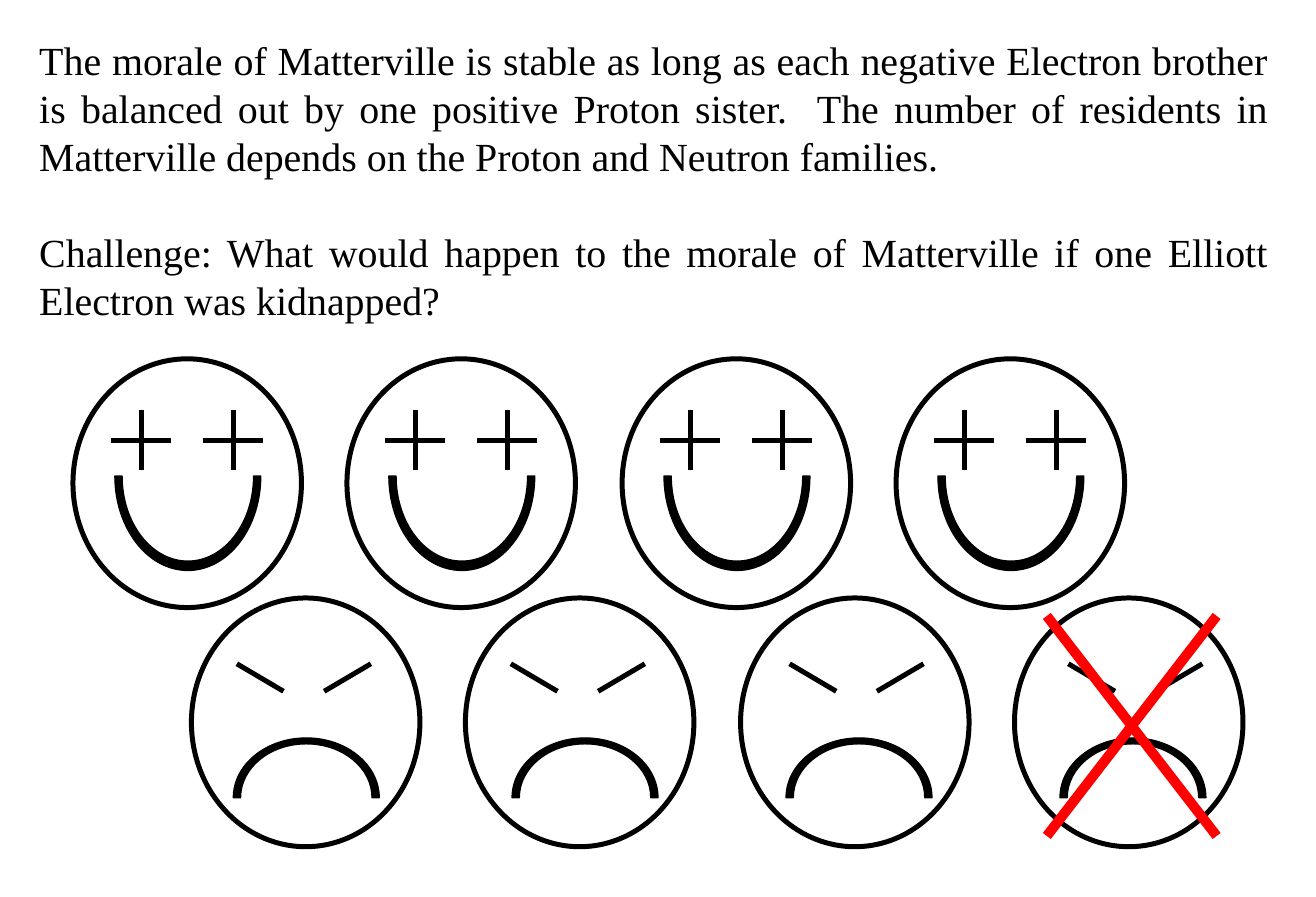
from pptx import Presentation
from pptx.dml.color import RGBColor
from pptx.enum.shapes import MSO_CONNECTOR as Connector, MSO_SHAPE as Shape
from pptx.enum.text import MSO_ANCHOR as Anchor, MSO_AUTO_SIZE as AutoSize, PP_ALIGN as Align
from pptx.oxml import parse_xml
from pptx.oxml.ns import nsdecls, qn
from pptx.util import Pt

PX = 9144  # 100 px to the inch
COLORS = {"ink": "000000", "face": "FFFFFF", "cross": "FF0000"}
FACE_WIDTH, FACE_HEIGHT = 191, 208
ROW_SPAN = 688  # from the first face of a row to the fourth
MOUTH_WIDTH = 122
LINE_HEIGHT = Pt(28.9)

# Upper half of a ring in a 1000 by 1000 box
MOUTH_CURVES = [
    ("moveTo", [(0, 500)]),
    ("cubicBezTo", [(0, 224), (224, 0), (500, 0)]),
    ("cubicBezTo", [(776, 0), (1000, 224), (1000, 500)]),
    ("lnTo", [(950, 500)]),
    ("cubicBezTo", [(950, 251), (749, 50), (500, 50)]),
    ("cubicBezTo", [(251, 50), (50, 251), (50, 500)]),
    ("close", []),
]

STORY = [
    "The morale of Matterville is stable as long as each negative Electron brother "
    "is balanced out by one positive Proton sister.  The number of residents in "
    "Matterville depends on the Proton and Neutron families.",
    "Challenge: What would happen to the morale of Matterville if one Elliott "
    "Electron was kidnapped?",
]


def px(*lengths):
    return [length * PX for length in lengths]


def color(name):
    return RGBColor.from_string(COLORS[name])


def paint(shape, fill, line_width):
    shape.shadow.inherit = False
    shape.fill.solid()
    shape.fill.fore_color.rgb = color(fill)
    shape.line.color.rgb = color("ink")
    shape.line.width = Pt(line_width)


def add_line(shapes, start, end, name="ink", width=3):
    line = shapes.add_connector(Connector.STRAIGHT, *px(*start, *end))
    line.line.color.rgb = color(name)
    line.line.width = Pt(width)
    properties = line._element.spPr
    properties.append(properties.makeelement(qn("a:effectLst"), {}))


def add_head(shapes, left, top):
    head = shapes.add_shape(Shape.OVAL, *px(left, top, FACE_WIDTH, FACE_HEIGHT))
    paint(head, "face", 3)


def mouth_geometry():
    steps = ""
    for command, points in MOUTH_CURVES:
        inner = "".join(f'<a:pt x="{x}" y="{y}"/>' for x, y in points)
        steps += f"<a:{command}>{inner}</a:{command}>"
    return parse_xml(
        f'<a:custGeom {nsdecls("a")}><a:avLst/><a:gdLst/><a:ahLst/><a:cxnLst/>'
        '<a:rect l="0" t="0" r="r" b="b"/>'
        f'<a:pathLst><a:path w="1000" h="1000">{steps}</a:path></a:pathLst></a:custGeom>'
    )


def add_mouth(shapes, left, top, height, sad=False):
    mouth = shapes.add_shape(Shape.RECTANGLE, *px(left, top, MOUTH_WIDTH, height))
    properties = mouth._element.spPr
    properties.replace(properties.find(qn("a:prstGeom")), mouth_geometry())
    mouth.rotation = 180
    if sad:
        properties.find(qn("a:xfrm")).set("flipV", "1")
    paint(mouth, "ink", 0.75)


def add_story(slide, left, top, width, height):
    box = slide.shapes.add_textbox(*px(left, top, width, height))
    frame = box.text_frame
    frame.word_wrap = True
    frame.auto_size = AutoSize.SHAPE_TO_FIT_TEXT
    frame.vertical_anchor = Anchor.MIDDLE
    frame.text = "\n".join(STORY)
    for paragraph in frame.paragraphs:
        paragraph.alignment = Align.JUSTIFY
        paragraph.line_spacing = LINE_HEIGHT
        font = paragraph.runs[0].font
        font.name = "Times New Roman"
        font.size = Pt(24)
        font.color.rgb = color("ink")
    frame.paragraphs[1].space_before = LINE_HEIGHT


def add_proton(slide, left, top):
    shapes = slide.shapes.add_group_shape().shapes
    add_head(shapes, left, top)
    add_mouth(shapes, left + 35, top + 19, 158)
    # Plus-shaped eyes
    for eye in (57, 134):
        x, y = left + eye, top + 68
        add_line(shapes, (x, y - 25), (x, y + 25))
        add_line(shapes, (x - 25, y), (x + 25, y))


def add_electron(slide, left, top, brow, mouth):
    shapes = slide.shapes.add_group_shape().shapes
    add_head(shapes, left, top)
    # Slanted brows
    for outer, slant in ((brow, 39), (brow + 112, -39)):
        x = left + outer
        add_line(shapes, (x, top + 55), (x + slant, top + 78))
    add_mouth(shapes, left + mouth, top + 117, 100, sad=True)


def add_cross(slide, left, top, width, height):
    shapes = slide.shapes.add_group_shape().shapes
    right, bottom = left + width, top + height
    add_line(shapes, (right, top), (left, bottom), "cross", 6)
    add_line(shapes, (left, top), (right, bottom), "cross", 6)


def main():
    presentation = Presentation()
    presentation.slide_width, presentation.slide_height = px(1100, 750)
    slide = presentation.slides.add_slide(presentation.slide_layouts[6])

    add_story(slide, 23, 25, 1047, 250)

    # Proton sisters above, Electron brothers below
    offsets = [round(ROW_SPAN * column / 3) for column in range(4)]
    for offset in offsets:
        add_proton(slide, 61 + offset, 300)
    features = [(38, 35), (38, 39), (41, 38), (45, 38)]
    for offset, (brow, mouth) in zip(offsets, features):
        add_electron(slide, 160 + offset, 500, brow, mouth)

    # The last brother is kidnapped
    add_cross(slide, 875, 515, 142, 184)

    presentation.save("out.pptx")


if __name__ == "__main__":
    main()
